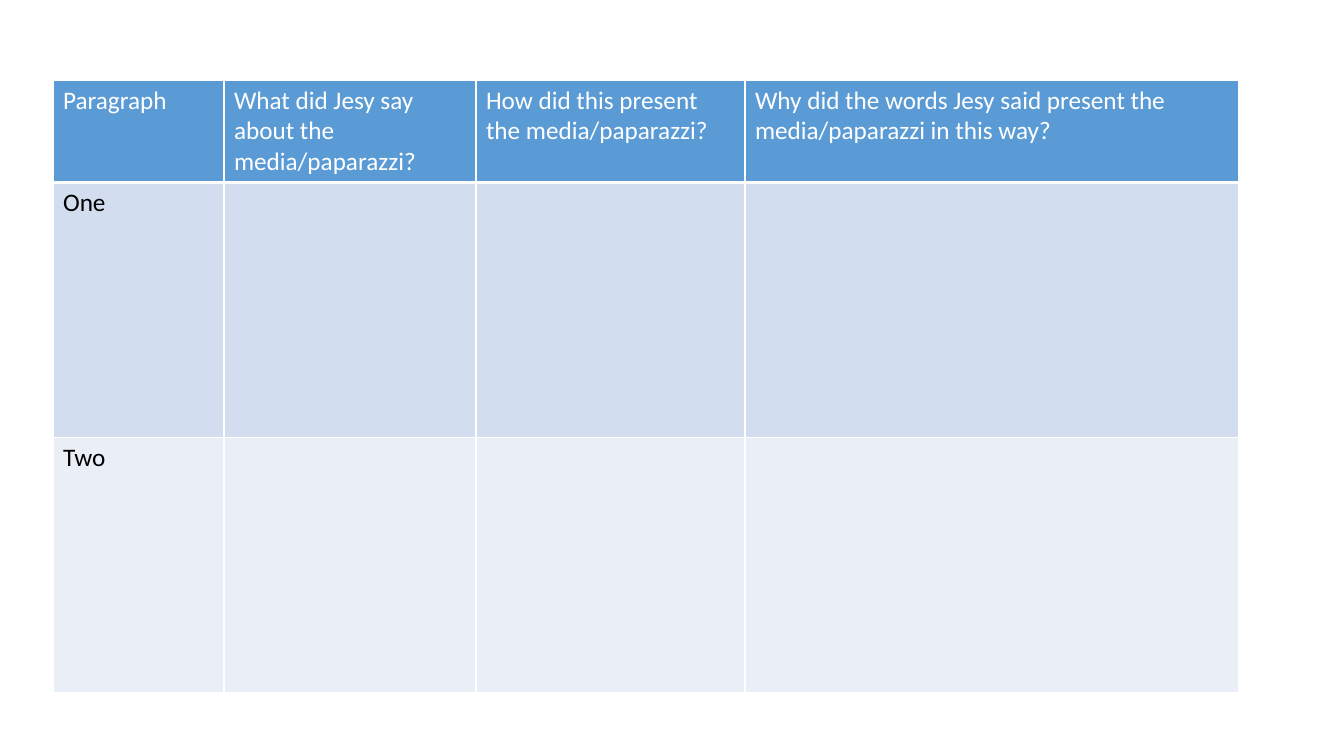
from lxml import etree
from pptx import Presentation
from pptx.dml.color import RGBColor
from pptx.oxml.ns import qn
from pptx.util import Emu, Pt

EMU_PER_PX = 914400 / 100.8
EMU_PER_POINT = 12700
WHITE = "FFFFFF"
BLACK = "000000"
HEADER_BLUE = "5B9BD5"
BAND_FILLS = ["D2DEEF", "EAEFF7"]

COLUMN_WIDTHS = [171, 252, 269, 494]
ROW_HEIGHTS = [102, 255, 255]
HEADINGS = [
    "Paragraph",
    "What did Jesy say about the media/paparazzi?",
    "How did this present the media/paparazzi?",
    "Why did the words Jesy said present the media/paparazzi in this way?",
]
PARAGRAPH_LABELS = ["One", "Two"]


def px(length):
    return Emu(round(length * EMU_PER_PX))


def colour(hex_string):
    return RGBColor.from_string(hex_string)


class Worksheet:
    """Holds the text style and the current slide."""

    def __init__(self, page, font="Calibri", size=18):
        self.page = page
        self.font = font
        self.size = size

    def table(self, left, top, widths, heights):
        frame = self.page.shapes.add_table(
            len(heights), len(widths), px(left), px(top), px(sum(widths)), px(sum(heights))
        )
        grid = frame.table
        for column, width in zip(grid.columns, widths):
            column.width = px(width)
        for row, height in zip(grid.rows, heights):
            row.height = px(height)
        return grid

    def row(self, cells, texts, fill, text_colour, bottom_border=1):
        for cell, text in zip(cells, texts):
            cell.text_frame.text = text
            para = cell.text_frame.paragraphs[0]
            para.font.size = Pt(self.size)
            for span in para.runs:
                span.font.name = self.font
                span.font.size = Pt(self.size)
                span.font.bold = False
                span.font.color.rgb = colour(text_colour)
            self.borders(cell, bottom_border)
            cell.fill.solid()
            cell.fill.fore_color.rgb = colour(fill)

    def borders(self, cell, bottom):
        """Draw white cell borders, 1 pt except for the given bottom width."""
        properties = cell._tc.get_or_add_tcPr()
        for side, points in {"L": 1, "R": 1, "T": 1, "B": bottom}.items():
            line = etree.SubElement(
                properties, qn(f"a:ln{side}"), w=str(points * EMU_PER_POINT)
            )
            solid = etree.SubElement(line, qn("a:solidFill"))
            etree.SubElement(solid, qn("a:srgbClr"), val=WHITE)


def main():
    deck = Presentation()
    deck.slide_width = px(1344)
    deck.slide_height = px(756)
    sheet = Worksheet(deck.slides.add_slide(deck.slide_layouts[6]))

    grid = sheet.table(53, 80, COLUMN_WIDTHS, ROW_HEIGHTS)
    header, *answer_rows = grid.rows
    sheet.row(header.cells, HEADINGS, HEADER_BLUE, WHITE, bottom_border=3)
    blanks = [""] * (len(COLUMN_WIDTHS) - 1)
    for row, label, fill in zip(answer_rows, PARAGRAPH_LABELS, BAND_FILLS):
        sheet.row(row.cells, [label, *blanks], fill, BLACK)

    deck.save("out.pptx")


if __name__ == "__main__":
    main()
